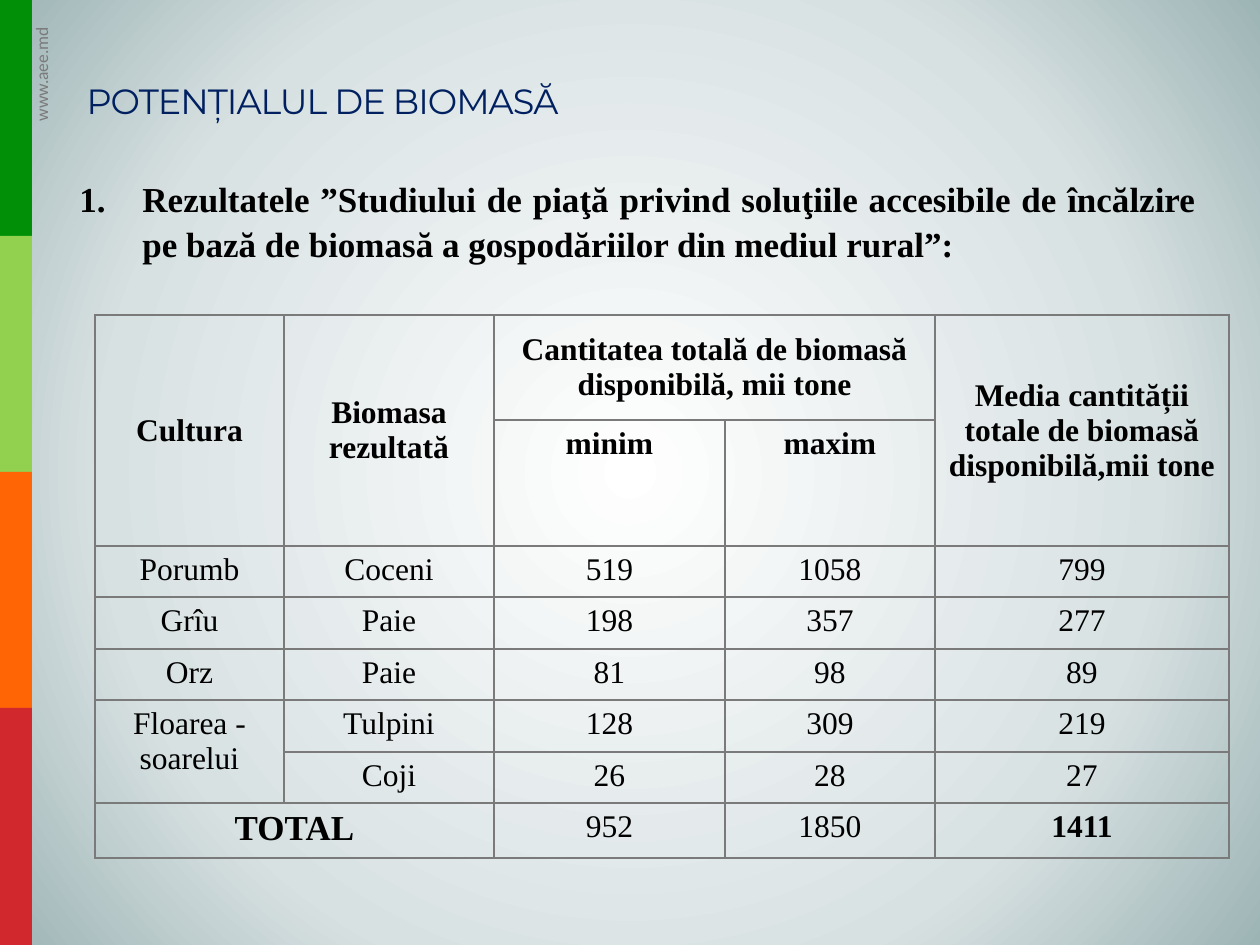
import pptx
import pptx.util
import pptx.dml.color
import pptx.enum.shapes
import pptx.enum.text
import pptx.oxml
import pptx.oxml.ns

Color = pptx.dml.color.RGBColor
Align = pptx.enum.text.PP_ALIGN
Anchor = pptx.enum.text.MSO_ANCHOR
Fit = pptx.enum.text.MSO_AUTO_SIZE
qn = pptx.oxml.ns.qn
NS = pptx.oxml.ns.nsdecls("a")

GREEN = Color(0x01, 0x8F, 0x08)
LIME = Color(0x92, 0xD0, 0x50)
ORANGE = Color(0xFF, 0x64, 0x05)
RED = Color(0xD1, 0x28, 0x2E)
GRAY = Color(0x7A, 0x7A, 0x7A)
NAVY = Color(0x00, 0x20, 0x60)
BLACK = Color(0x00, 0x00, 0x00)
WHITE = Color(0xFF, 0xFF, 0xFF)
MIST = Color(0xD8, 0xE1, 0xE2)
SLATE = Color(0x9D, 0xB4, 0xB5)
SERIF = "Times New Roman"

SCALE = 914400 / 126
COLS = [189, 210, 231, 210, 294]
ROWS = [105, 126, 51, 52, 51, 52, 51, 55]
DATA = [
    ["Cultura", "Biomasa rezultată", "Cantitatea totală de biomasă disponibilă, mii tone",
     "", "Media cantității totale de biomasă disponibilă,mii tone"],
    ["", "", "minim", "maxim", ""],
    ["Porumb", "Coceni", "519", "1058", "799"],
    ["Grîu", "Paie", "198", "357", "277"],
    ["Orz", "Paie", "81", "98", "89"],
    ["Floarea - soarelui", "Tulpini", "128", "309", "219"],
    ["", "Coji", "26", "28", "27"],
    ["TOTAL", "", "952", "1850", "1411"],
]
SPANS = [(0, 0, 1, 0), (0, 1, 1, 1), (0, 2, 0, 3), (0, 4, 1, 4), (5, 0, 6, 0), (7, 0, 7, 1)]


def px(size):
    return pptx.util.Emu(round(size * SCALE))


def style(para, name, size, color, bold=False):
    font = para.font
    font.name = name
    font.size = pptx.util.Pt(size)
    font.color.rgb = color
    font.bold = bold


def paint(slide):
    slide.background.fill.gradient()
    grad = slide.element.find(".//" + qn("a:gradFill"))
    for part in list(grad):
        grad.remove(part)
    stops = "".join(
        f'<a:gs pos="{pos * 1000}"><a:srgbClr val="{color}"/></a:gs>'
        for pos, color in [(0, WHITE), (67, MIST), (100, SLATE)])
    grad.append(pptx.oxml.parse_xml(f"<a:gsLst {NS}>{stops}</a:gsLst>"))
    grad.append(pptx.oxml.parse_xml(
        f'<a:path {NS} path="circle">'
        '<a:fillToRect l="50000" t="50000" r="50000" b="50000"/></a:path>'))


def add_bands(slide, left, top, width, step):
    kind = pptx.enum.shapes.MSO_SHAPE.RECTANGLE
    for row, color in enumerate([GREEN, LIME, ORANGE, RED]):
        band = slide.shapes.add_shape(
            kind, px(left), px(top + row * step), px(width), px(step + 1))
        band.shadow.inherit = False
        band.fill.solid()
        band.fill.fore_color.rgb = color
        band.line.fill.background()


def add_site(slide, left, top, width, height):
    box = slide.shapes.add_textbox(px(left), px(top), px(width), px(height))
    box.rotation = 270
    frame = box.text_frame
    frame.word_wrap = False
    frame.auto_size = Fit.SHAPE_TO_FIT_TEXT
    para = frame.paragraphs[0]
    para.text = "www.aee.md"
    style(para, "Calibri", 10, GRAY)


def set_title(slide, left, top, width, height):
    title = slide.shapes.title
    title.left, title.top = px(left), px(top)
    title.width, title.height = px(width), px(height)
    frame = title.text_frame
    frame.word_wrap = True
    frame.auto_size = Fit.SHAPE_TO_FIT_TEXT
    frame.vertical_anchor = Anchor.BOTTOM
    para = frame.paragraphs[0]
    para.text = "POTENȚIALUL DE BIOMASĂ"
    para.alignment = Align.LEFT
    style(para, "Montserrat", 20, NAVY)
    para.runs[0].font.bold = False
    para.runs[0].font._element.set("spc", "-60")


def add_intro(slide, left, top, width, height):
    box = slide.shapes.add_textbox(px(left), px(top), px(width), px(height))
    frame = box.text_frame
    frame.word_wrap = True
    frame.auto_size = Fit.SHAPE_TO_FIT_TEXT
    para = frame.paragraphs[0]
    para.text = ("Rezultatele ”Studiului de piaţă privind soluţiile accesibile de încălzire "
                 "pe bază de biomasă a gospodăriilor din mediul rural”:")
    para.alignment = Align.JUSTIFY
    para.line_spacing = 1.08
    props = para._p.get_or_add_pPr()
    props.set("marL", str(px(63)))
    props.set("indent", str(-px(63)))
    props.append(pptx.oxml.parse_xml(f'<a:buFont {NS} typeface="+mj-lt"/>'))
    props.append(pptx.oxml.parse_xml(f'<a:buAutoNum {NS} type="arabicPeriod"/>'))
    style(para, SERIF, 20, BLACK, True)


def edge(cell):
    props = cell._tc.get_or_add_tcPr()
    for spot, side in enumerate(["lnL", "lnR", "lnT", "lnB"]):
        props.insert(spot, pptx.oxml.parse_xml(
            f'<a:{side} {NS} w="12700"><a:solidFill><a:srgbClr val="{GRAY}"/>'
            f"</a:solidFill></a:{side}>"))


def add_grid(slide, left, top):
    table = slide.shapes.add_table(
        len(ROWS), len(COLS), px(left), px(top), px(sum(COLS)), px(sum(ROWS))).table
    table.first_row = False
    table.horz_banding = False
    for col, width in zip(table.columns, COLS):
        col.width = px(width)
    for row, height in zip(table.rows, ROWS):
        row.height = px(height)
    for y, line in enumerate(DATA):
        for x, text in enumerate(line):
            cell = table.cell(y, x)
            cell.fill.background()
            edge(cell)
            cell.vertical_anchor = Anchor.MIDDLE if y == 0 else Anchor.TOP
            para = cell.text_frame.paragraphs[0]
            para.text = text
            para.alignment = Align.CENTER
            bold = y < 2 or text in ("TOTAL", "1411")
            style(para, SERIF, 20 if text == "TOTAL" else 18, BLACK, bold)
    for y, x, last, end in SPANS:
        table.cell(y, x).merge(table.cell(last, end))


def main():
    deck = pptx.Presentation()
    deck.slide_width, deck.slide_height = px(1260), px(945)
    slide = deck.slides.add_slide(deck.slide_layouts.get_by_name("Title Only"))
    paint(slide)
    add_bands(slide, 0, 0, 32, 236)
    add_site(slide, -20, 55, 123, 34)
    set_title(slide, 74, 73, 955, 55)
    add_intro(slide, 67, 168, 1142, 97)
    add_grid(slide, 95, 315)
    deck.save("out.pptx")


if __name__ == "__main__":
    main()
